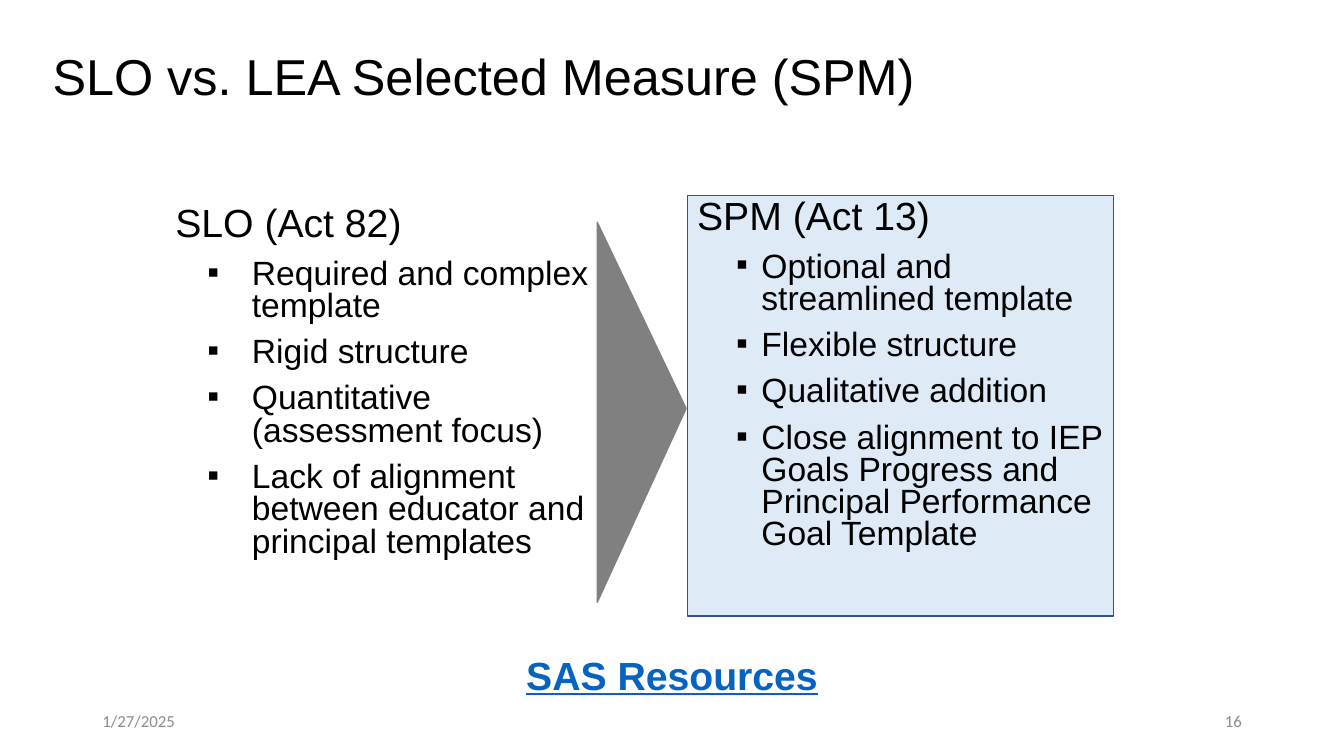
from lxml import etree
from pptx import Presentation
from pptx.dml.color import RGBColor
from pptx.enum.shapes import MSO_SHAPE
from pptx.enum.text import MSO_ANCHOR, PP_ALIGN
from pptx.oxml.ns import qn
from pptx.util import Cm, Pt

RECTANGLE, TRIANGLE = MSO_SHAPE.RECTANGLE, MSO_SHAPE.ISOSCELES_TRIANGLE
TOP, MIDDLE = MSO_ANCHOR.TOP, MSO_ANCHOR.MIDDLE
LEFT, CENTER, RIGHT = PP_ALIGN.LEFT, PP_ALIGN.CENTER, PP_ALIGN.RIGHT

# Content; boxes are left, top, width, height in cm
TITLE = "SLO vs. LEA Selected Measure (SPM)"
PANELS = [
    {
        "heading": "SLO (Act 82)",
        "points": [
            "Required and complex template",
            "Rigid structure",
            "Quantitative (assessment focus)",
            "Lack of alignment between educator and principal templates",
        ],
        "box": (4.17, 5.11, 11.23, 10.59),
        "fill": "FFFFFF", "line": None, "margin": 1.93, "hanging": 1.12,
    },
    {
        "heading": "SPM (Act 13)",
        "points": [
            "Optional and streamlined template",
            "Flexible structure",
            "Qualitative addition",
            "Close alignment to IEP Goals Progress and Principal Performance Goal Template",
        ],
        "box": (17.32, 4.93, 10.75, 10.59),
        "fill": "DEEBF7", "line": "2F5597", "margin": 1.62, "hanging": 0.64,
    },
]
ARROW_BOX = (11.38, 9.27, 9.58, 2.24)
LABELS = [
    ("SAS Resources", (8.47, 16.28, 16.93, 1.45), CENTER, TOP, 28, "Arial", "0563C1", True),
    ("1/27/2025", (2.33, 17.65, 7.62, 1.01), LEFT, MIDDLE, 12, "Calibri", "8C8C8C", False),
    ("16", (23.93, 17.65, 7.62, 1.01), RIGHT, MIDDLE, 12, "Calibri", "8C8C8C", False),
]


def color(value):
    return RGBColor.from_string(value)


def place(box):
    return [Cm(length) for length in box]


def add_run(paragraph, text, size, font="Arial", ink="000000", strong=False):
    run = paragraph.add_run()
    run.text = text
    run.font.size, run.font.name = Pt(size), font
    run.font.color.rgb = color(ink)
    run.font.bold = run.font.underline = strong


def add_bullet(paragraph, margin, hanging):
    properties = paragraph._p.get_or_add_pPr()
    properties.set("marL", str(Cm(margin)))
    properties.set("indent", str(-Cm(hanging)))
    etree.SubElement(properties, qn("a:buFont")).set("typeface", "Arial")
    etree.SubElement(properties, qn("a:buChar")).set("char", "▪")


def add_shape(slide, kind, box, fill, line):
    shape = slide.shapes.add_shape(kind, *place(box))
    shape.shadow.inherit = False
    shape.fill.solid()
    shape.fill.fore_color.rgb = color(fill)
    if line:
        shape.line.color.rgb = color(line)
        shape.line.width = Pt(1)
    else:
        shape.line.fill.background()
    return shape


def add_panel(slide, panel):
    shape = add_shape(slide, RECTANGLE, panel["box"], panel["fill"], panel["line"])
    frame = shape.text_frame
    frame.word_wrap, frame.vertical_anchor = True, TOP
    heading = frame.paragraphs[0]
    add_run(heading, panel["heading"], 28)
    for point in panel["points"]:
        paragraph = frame.add_paragraph()
        paragraph.space_before = Pt(10)
        add_bullet(paragraph, panel["margin"], panel["hanging"])
        add_run(paragraph, point, 24)
    for paragraph in frame.paragraphs:
        paragraph.alignment, paragraph.line_spacing = LEFT, 0.8


def add_label(slide, text, box, alignment, anchor, size, font, ink, strong):
    frame = slide.shapes.add_textbox(*place(box)).text_frame
    frame.word_wrap, frame.vertical_anchor = True, anchor
    paragraph = frame.paragraphs[0]
    paragraph.alignment = alignment
    add_run(paragraph, text, size, font, ink, strong)


def main():
    presentation = Presentation()
    presentation.slide_width, presentation.slide_height = Cm(33.87), Cm(19.05)
    slide = presentation.slides.add_slide(presentation.slide_layouts[5])

    # Title
    title = slide.shapes.title
    title.left, title.top, title.width, title.height = place((1.07, 0.4, 22.86, 3.18))
    title.text_frame.word_wrap = True
    title.text_frame.vertical_anchor = MIDDLE
    paragraph = title.text_frame.paragraphs[0]
    paragraph.alignment, paragraph.line_spacing = LEFT, 0.9
    add_run(paragraph, TITLE, 36)

    # Two panels with the arrow between them
    slo, spm = PANELS
    add_panel(slide, slo)
    arrow = add_shape(slide, TRIANGLE, ARROW_BOX, "808080", "808080")
    arrow.rotation = 90
    arrow.adjustments[0] = 0.49
    add_panel(slide, spm)

    # Resource line, date and slide number
    for label in LABELS:
        add_label(slide, *label)

    presentation.save("out.pptx")


if __name__ == "__main__":
    main()
